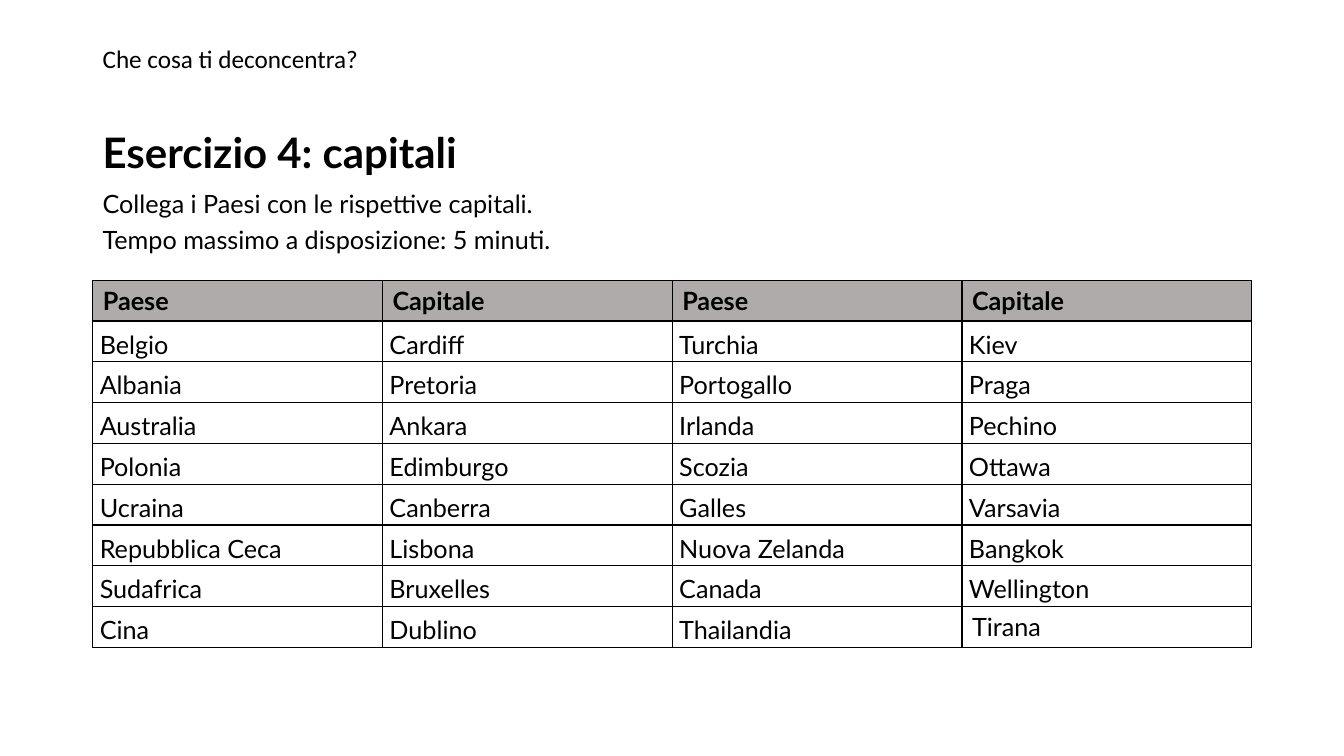
from dataclasses import dataclass

from lxml import etree
from pptx import Presentation, util as u
from pptx.dml.color import RGBColor
from pptx.enum import text
from pptx.oxml import ns

PX = 4572  # EMU per px, 200 px to the inch
COLORS = {"ink": "000000", "header": "AFABAB", "paper": "FFFFFF"}
LEFT, WIDTH = 184, 2300
TABLE_TOP, ROW_HEIGHT = 556, 81
CELL_SIDE = 14

HEADINGS = ("Paese", "Capitale", "Paese", "Capitale")
ROWS = (
    ("Belgio", "Cardiff", "Turchia", "Kiev"),
    ("Albania", "Pretoria", "Portogallo", "Praga"),
    ("Australia", "Ankara", "Irlanda", "Pechino"),
    ("Polonia", "Edimburgo", "Scozia", "Ottawa"),
    ("Ucraina", "Canberra", "Galles", "Varsavia"),
    ("Repubblica Ceca", "Lisbona", "Nuova Zelanda", "Bangkok"),
    ("Sudafrica", "Bruxelles", "Canada", "Wellington"),
    ("Cina", "Dublino", "Thailandia", "Tirana"),
)


@dataclass(frozen=True)
class TextBlock:
    lines: tuple[str, ...]
    top: int
    width: int
    height: int
    size: int = 18
    font: str = "Lato"
    bold: bool = False
    spacing: float = 1.0
    wrap: bool = True
    anchor: text.MSO_ANCHOR = text.MSO_ANCHOR.TOP


BLOCKS = (
    TextBlock(("Esercizio 4: capitali",), 246, WIDTH, 124, size=30, bold=True,
              spacing=0.9, anchor=text.MSO_ANCHOR.MIDDLE),
    TextBlock(("Collega i Paesi con le rispettive capitali.",
               "Tempo massimo a disposizione: 5 minuti."), 352, WIDTH, 160, spacing=1.2),
    TextBlock(("Che cosa ti deconcentra?",), 76, 554, 80, font="Calibri", wrap=False),
)


def px(length: int) -> u.Emu:
    return u.Emu(length * PX)


def write(frame, *lines: str, size: int = 18, font: str = "Lato",
          bold: bool = False, spacing: float = 1.0) -> None:
    """Fill a text frame with one paragraph per line."""
    for index, line in enumerate(lines):
        paragraph = frame.paragraphs[0] if index == 0 else frame.add_paragraph()
        paragraph.line_spacing = spacing
        run = paragraph.add_run()
        run.text = line
        run.font.size = u.Pt(size)
        run.font.name = font
        run.font.bold = bold
        run.font.color.rgb = RGBColor.from_string(COLORS["ink"])


def draw_block(slide, block: TextBlock) -> None:
    frame = slide.shapes.add_textbox(
        px(LEFT), px(block.top), px(block.width), px(block.height)).text_frame
    frame.word_wrap = block.wrap
    frame.vertical_anchor = block.anchor
    write(frame, *block.lines, size=block.size, font=block.font,
          bold=block.bold, spacing=block.spacing)


def style_cell(cell, fill: str) -> None:
    """Give a cell a thin border on every side and a solid fill."""
    properties = cell._tc.get_or_add_tcPr()
    for side in ("a:lnL", "a:lnR", "a:lnT", "a:lnB"):
        line = etree.SubElement(properties, ns.qn(side), w=str(u.Pt(1)))
        solid = etree.SubElement(line, ns.qn("a:solidFill"))
        etree.SubElement(solid, ns.qn("a:srgbClr"), val=COLORS["ink"])
    cell.fill.solid()
    cell.fill.fore_color.rgb = RGBColor.from_string(COLORS[fill])


def draw_capitals(slide) -> None:
    row_count, column_count = len(ROWS) + 1, len(HEADINGS)
    capitals = slide.shapes.add_table(
        row_count, column_count, px(LEFT), px(TABLE_TOP),
        px(WIDTH), px(ROW_HEIGHT * row_count)).table
    capitals.first_row = capitals.horz_banding = False

    for row, names in enumerate((HEADINGS, *ROWS)):
        for column, name in enumerate(names):
            cell = capitals.cell(row, column)
            is_header = row == 0
            is_last = (row, column) == (row_count - 1, column_count - 1)
            style_cell(cell, "header" if is_header else "paper")
            if is_header or is_last:
                write(cell.text_frame, name, bold=is_header)
                continue
            cell.margin_left = cell.margin_right = px(CELL_SIDE)
            cell.margin_top = cell.margin_bottom = 0
            cell.vertical_anchor = text.MSO_ANCHOR.MIDDLE
            write(cell.text_frame, name, spacing=1.2)


def main() -> None:
    deck = Presentation()
    deck.slide_width, deck.slide_height = px(2667), px(1500)
    slide = deck.slides.add_slide(deck.slide_layouts[6])
    for block in BLOCKS:
        draw_block(slide, block)
    draw_capitals(slide)
    deck.save("out.pptx")


if __name__ == "__main__":
    main()
